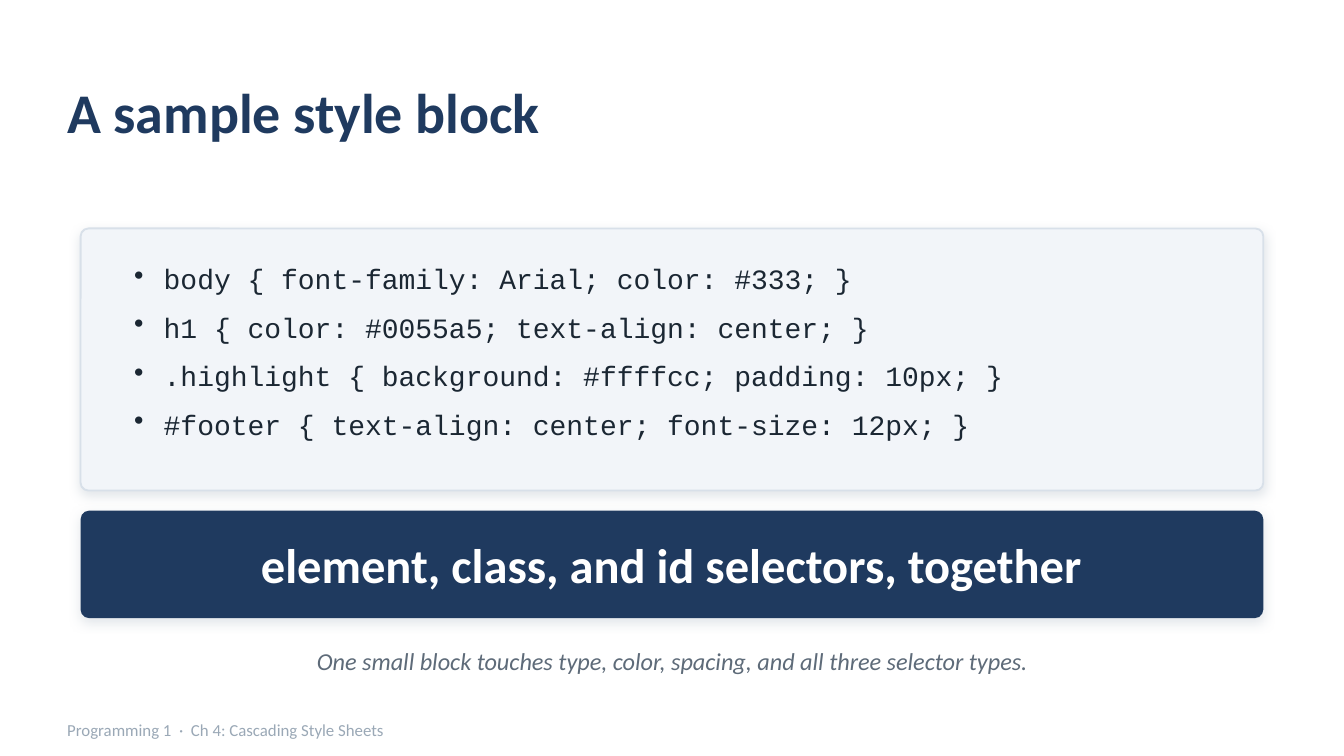
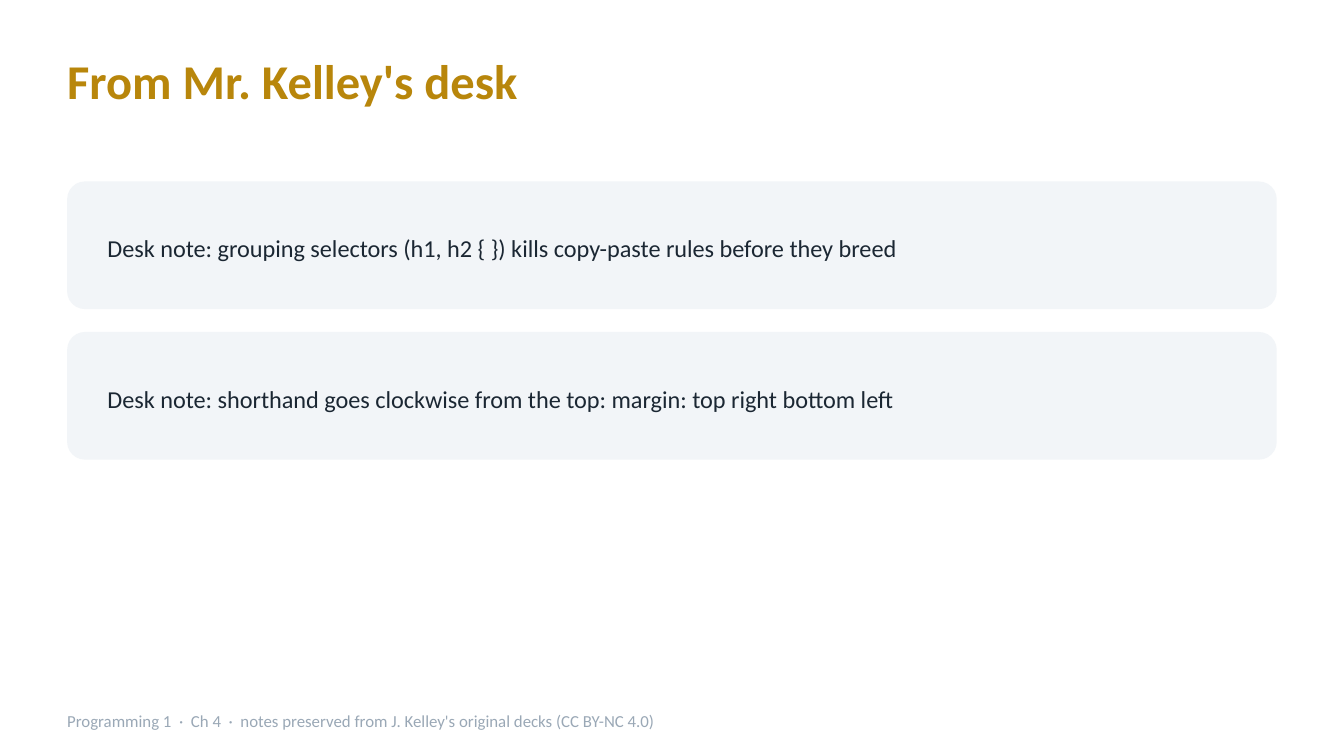
from dataclasses import dataclass

from lxml import etree
from pptx import Presentation
from pptx.dml.color import RGBColor
from pptx.enum.shapes import MSO_SHAPE
from pptx.enum.text import MSO_ANCHOR, MSO_AUTO_SIZE, PP_ALIGN
from pptx.oxml.ns import qn
from pptx.slide import Slide
from pptx.util import Inches, Pt

ROUND = MSO_SHAPE.ROUNDED_RECTANGLE
TOP, MIDDLE = MSO_ANCHOR.TOP, MSO_ANCHOR.MIDDLE
LEFT, CENTER = PP_ALIGN.LEFT, PP_ALIGN.CENTER
GROW, FIXED = MSO_AUTO_SIZE.SHAPE_TO_FIT_TEXT, MSO_AUTO_SIZE.NONE


# Theme: colours, fonts and type sizes
@dataclass(frozen=True)
class Theme:
    navy: str = "1F3A5F"
    gold: str = "B8860B"
    ink: str = "1B2733"
    gray: str = "5E6B79"
    mist: str = "9AA8B6"
    white: str = "FFFFFF"
    panel: str = "F2F5F9"
    card: str = "F2F5F8"
    edge: str = "D8E0E9"
    sans: str = "Calibri"
    mono: str = "Courier New"
    title: int = 30
    head: int = 26
    code: int = 15
    body: int = 13
    foot: int = 9


THEME = Theme()


# Repeated elements
@dataclass(frozen=True)
class Box:
    x: float
    y: float
    w: float
    h: float

    def place(self) -> tuple[int, ...]:
        return tuple(Inches(v) for v in (self.x, self.y, self.w, self.h))


@dataclass(frozen=True)
class Panel:
    box: Box
    fill: str
    bend: float
    edge: str = ""
    shadow: bool = False


@dataclass(frozen=True)
class Label:
    box: Box
    lines: tuple[str, ...]
    size: int
    color: str
    face: str = THEME.sans
    bold: bool = False
    italic: bool = False
    align: PP_ALIGN = LEFT
    anchor: MSO_ANCHOR = MIDDLE
    fit: MSO_AUTO_SIZE = FIXED
    pad: tuple[float, float] = (0, 0)
    after: int = 0
    bullet: bool = False


def add_shadow(shape) -> None:
    """Cast a soft shadow straight down."""
    effects = shape._element.spPr.find(qn("a:effectLst"))
    outer = etree.SubElement(
        effects, qn("a:outerShdw"), blurRad=str(Pt(6)), dist=str(Pt(2)),
        dir="5400000", algn="bl", rotWithShape="0")
    color = etree.SubElement(outer, qn("a:srgbClr"), val=THEME.mist)
    etree.SubElement(color, qn("a:alpha"), val="28000")


def draw_panel(slide: Slide, panel: Panel) -> None:
    shape = slide.shapes.add_shape(ROUND, *panel.box.place())
    shape.adjustments[0] = panel.bend
    shape.fill.solid()
    shape.fill.fore_color.rgb = RGBColor.from_string(panel.fill)
    if panel.edge:
        shape.line.color.rgb = RGBColor.from_string(panel.edge)
        shape.line.width = Pt(1)
    else:
        shape.line.fill.background()
    shape.shadow.inherit = False
    if panel.shadow:
        add_shadow(shape)


def add_bullet(para) -> None:
    props = para._p.get_or_add_pPr()
    props.set("marL", str(Inches(0.22)))
    props.set("indent", str(-Inches(0.22)))
    etree.SubElement(props, qn("a:buChar"), char="•")


def draw_label(slide: Slide, label: Label) -> None:
    frame = slide.shapes.add_textbox(*label.box.place()).text_frame
    side, edge = (Inches(v) for v in label.pad)
    layout = {
        "word_wrap": True, "auto_size": label.fit,
        "vertical_anchor": label.anchor,
        "margin_left": side, "margin_right": side,
        "margin_top": edge, "margin_bottom": edge,
    }
    for key, value in layout.items():
        setattr(frame, key, value)
    style = {"name": label.face, "size": Pt(label.size),
             "bold": label.bold, "italic": label.italic}
    for i, line in enumerate(label.lines):
        para = frame.add_paragraph() if i else frame.paragraphs[0]
        if label.bullet:
            add_bullet(para)
        para.alignment = label.align
        para.space_after = Pt(label.after)
        run = para.add_run()
        run.text = line
        for key, value in style.items():
            setattr(run.font, key, value)
        run.font.color.rgb = RGBColor.from_string(label.color)


def draw_all(slide: Slide, items: list[Panel | Label]) -> None:
    for item in items:
        draw = draw_panel if isinstance(item, Panel) else draw_label
        draw(slide, item)


def add_slide(deck) -> Slide:
    slide = deck.slides.add_slide(deck.slide_layouts[6])
    slide.background.fill.solid()
    slide.background.fill.fore_color.rgb = RGBColor.from_string(THEME.white)
    return slide


def footer(y: float, h: float, *parts: str, **extra) -> Label:
    text = "  ·  ".join(("Programming 1", *parts))
    return Label(Box(0.5, y, 8, h), (text,), THEME.foot, THEME.mist, **extra)


# Slide 1: code panel, banner and caption
CODE = (
    "body { font-family: Arial; color: #333; }",
    "h1 { color: #0055a5; text-align: center; }",
    ".highlight { background: #ffffcc; padding: 10px; }",
    "#footer { text-align: center; font-size: 12px; }",
)


def sample(deck) -> None:
    draw_all(add_slide(deck), [
        Label(Box(0.5, 0.4, 9, 0.85), ("A sample style block",),
              THEME.title, THEME.navy, bold=True),
        Panel(Box(0.6, 1.7, 8.8, 1.95), THEME.panel, 0.03,
              edge=THEME.edge, shadow=True),
        Label(Box(0.9, 1.9, 8.2, 1.6), CODE, THEME.code, THEME.ink,
              face=THEME.mono, anchor=TOP, pad=(0.1, 0.05), after=8,
              bullet=True),
        Panel(Box(0.6, 3.8, 8.8, 0.8), THEME.navy, 0.08, shadow=True),
        Label(Box(0.6, 3.83, 8.8, 0.74),
              ("element, class, and id selectors, together",),
              THEME.head, THEME.white, bold=True, align=CENTER),
        Label(Box(0.6, 4.72, 8.8, 0.4),
              ("One small block touches type, color, spacing, "
               "and all three selector types.",),
              THEME.body, THEME.gray, italic=True, align=CENTER),
        footer(5.3, 0.26, "Ch 4: Cascading Style Sheets"),
    ])


# Slide 2: stacked note cards
NOTES = (
    "Desk note: grouping selectors (h1, h2 { }) kills copy-paste rules "
    "before they breed",
    "Desk note: shorthand goes clockwise from the top: "
    "margin: top right bottom left",
)


def desk(deck) -> None:
    flow = {"fit": GROW, "after": 4}
    items = [Label(Box(0.5, 0.38, 9, 0.6), ("From Mr. Kelley's desk",),
                   THEME.head, THEME.gold, bold=True, anchor=TOP, **flow)]
    for i, note in enumerate(NOTES):
        y = 1.35 + 1.12 * i
        items += [
            Panel(Box(0.5, y, 9, 0.95), THEME.card, 0.14),
            Label(Box(0.8, y + 0.12, 8.4, 0.75), (note,),
                  THEME.body, THEME.ink, **flow),
        ]
    items.append(footer(
        5.29, 0.25, "Ch 4",
        "notes preserved from J. Kelley's original decks (CC BY-NC 4.0)",
        anchor=TOP, **flow))
    draw_all(add_slide(deck), items)


def main() -> None:
    deck = Presentation()
    deck.slide_width = Inches(10)
    deck.slide_height = Inches(10) * 9 // 16
    sample(deck)
    desk(deck)
    deck.save("out.pptx")


if __name__ == "__main__":
    main()
